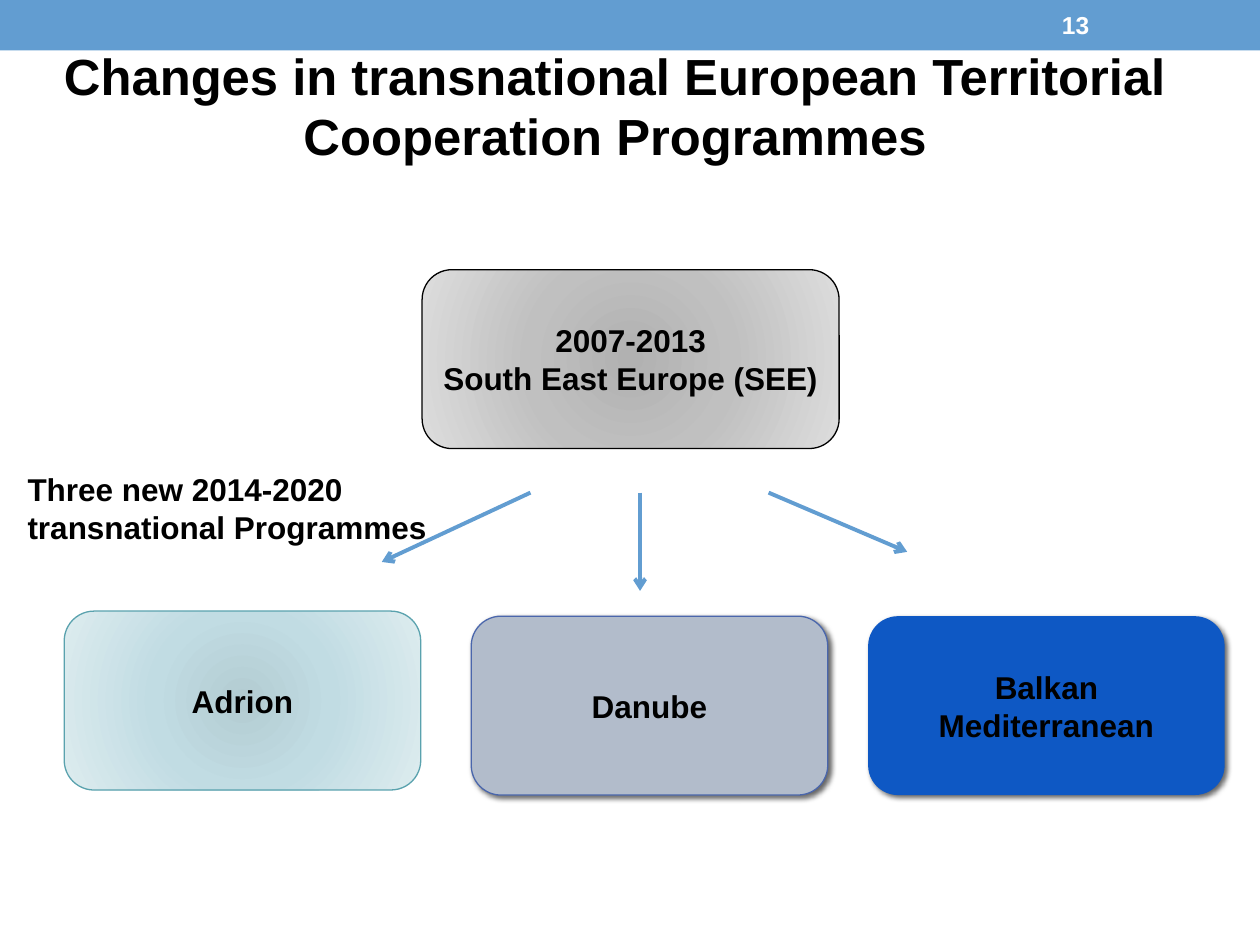
from dataclasses import dataclass
from typing import Optional

from pptx import Presentation
from pptx.dml.color import RGBColor
from pptx.enum.shapes import MSO_CONNECTOR, MSO_SHAPE
from pptx.enum.text import MSO_ANCHOR, PP_ALIGN
from pptx.oxml import parse_xml
from pptx.oxml.ns import nsdecls, qn
from pptx.oxml.xmlchemy import OxmlElement
from pptx.util import Inches, Pt

BLACK = RGBColor(0x00, 0x00, 0x00)
WHITE = RGBColor(0xFF, 0xFF, 0xFF)
ACCENT = RGBColor(0x62, 0x9D, 0xD1)
TEAL = RGBColor(0x5A, 0xA2, 0xAE)
INDIGO = RGBColor(0x4A, 0x66, 0xAC)
BLUE_GREY = RGBColor(0xB2, 0xBC, 0xCB)
BLUE = RGBColor(0x0E, 0x58, 0xC4)
GREYS = (RGBColor(0xB1, 0xB1, 0xB1), RGBColor(0xC0, 0xC0, 0xC0), RGBColor(0xDD, 0xDD, 0xDD))
TEALS = (RGBColor(0xB3, 0xCC, 0xD2), RGBColor(0xC1, 0xDC, 0xE3), RGBColor(0xDD, 0xEC, 0xEF))
GRADIENT_STOPS = (0, 45000, 100000)
BOX_HEIGHT = 1.42
PROGRAMME_WIDTH = 2.83
ARROW_TOP = 3.91


@dataclass(frozen=True)
class Box:
    text: str
    left: float
    top: float
    width: float
    colors: tuple[RGBColor, ...]
    outline: Optional[RGBColor] = None
    shadow: bool = False


@dataclass(frozen=True)
class Arrow:
    start_x: float
    end_x: float
    end_y: float


BOXES = (
    Box("2007-2013\nSouth East Europe (SEE)", 3.35, 2.14, 3.31, GREYS, BLACK),
    Box("Adrion", 0.51, 4.85, PROGRAMME_WIDTH, TEALS, TEAL),
    Box("Danube", 3.74, 4.89, PROGRAMME_WIDTH, (BLUE_GREY,), INDIGO, True),
    Box("Balkan Mediterranean", 6.89, 4.89, PROGRAMME_WIDTH, (BLUE,), None, True),
)
ARROWS = (Arrow(4.21, 3.03, 4.46), Arrow(6.1, 7.2, 4.38), Arrow(5.08, 5.08, 4.69))


def write_text(shape, text: str, *, size: float = 18, color: RGBColor = BLACK,
               align: PP_ALIGN = PP_ALIGN.LEFT, anchor: MSO_ANCHOR = MSO_ANCHOR.MIDDLE) -> None:
    frame = shape.text_frame
    frame.word_wrap = True
    frame.vertical_anchor = anchor
    frame.text = text
    for paragraph in frame.paragraphs:
        paragraph.alignment = align
        font = paragraph.runs[0].font
        font.name = "Arial"
        font.size = Pt(size)
        font.bold = True
        font.color.rgb = color


def add_text(slide, text: str, left: float, top: float, width: float, height: float, **text_format) -> None:
    shape = slide.shapes.add_textbox(Inches(left), Inches(top), Inches(width), Inches(height))
    write_text(shape, text, **text_format)


def apply_radial_gradient(shape, colors: tuple[RGBColor, ...]) -> None:
    stops = "".join(
        f'<a:gs pos="{position}"><a:srgbClr val="{str(color)}"/></a:gs>'
        for position, color in zip(GRADIENT_STOPS, colors)
    )
    gradient = parse_xml(
        f'<a:gradFill {nsdecls("a")} rotWithShape="1"><a:gsLst>{stops}</a:gsLst>'
        '<a:path path="circle"><a:fillToRect l="100000" t="100000" r="100000" b="100000"/>'
        "</a:path></a:gradFill>"
    )
    properties = shape.element.spPr
    properties.replace(properties.find(qn("a:solidFill")), gradient)


def apply_shadow(shape) -> None:
    shape.element.spPr.find(qn("a:effectLst")).append(parse_xml(
        f'<a:outerShdw {nsdecls("a")} blurRad="{int(Pt(3))}" dist="{int(Pt(2))}" dir="2700000" '
        f'rotWithShape="0"><a:srgbClr val="{str(BLACK)}"><a:alpha val="60000"/></a:srgbClr></a:outerShdw>'
    ))


def add_filled_shape(slide, kind: MSO_SHAPE, left: float, top: float, width: float, height: float,
                     color: RGBColor, outline: Optional[RGBColor] = None):
    shape = slide.shapes.add_shape(kind, Inches(left), Inches(top), Inches(width), Inches(height))
    shape.shadow.inherit = False
    shape.fill.solid()
    shape.fill.fore_color.rgb = color
    if outline is None:
        shape.line.fill.background()
    else:
        shape.line.color.rgb = outline
        shape.line.width = Pt(0.75)
    return shape


def add_box(slide, box: Box) -> None:
    shape = add_filled_shape(slide, MSO_SHAPE.ROUNDED_RECTANGLE, box.left, box.top,
                             box.width, BOX_HEIGHT, box.colors[0], box.outline)
    if len(box.colors) > 1:
        apply_radial_gradient(shape, box.colors)
    if box.shadow:
        apply_shadow(shape)
    shape.text_frame.margin_left = shape.text_frame.margin_right = Inches(0.08)
    write_text(shape, box.text, align=PP_ALIGN.CENTER)


def add_arrow(slide, arrow: Arrow) -> None:
    connector = slide.shapes.add_connector(
        MSO_CONNECTOR.STRAIGHT, Inches(arrow.start_x), Inches(ARROW_TOP),
        Inches(arrow.end_x), Inches(arrow.end_y))
    connector.line.color.rgb = ACCENT
    connector.line.width = Pt(2.25)
    head = OxmlElement("a:tailEnd")
    head.set("type", "arrow")
    properties = connector.element.spPr
    properties.find(qn("a:ln")).append(head)
    properties.append(OxmlElement("a:effectLst"))


def main() -> None:
    presentation = Presentation()
    presentation.slide_width = Inches(10)
    presentation.slide_height = Inches(7.5)
    slide = presentation.slides.add_slide(presentation.slide_layouts[6])

    add_filled_shape(slide, MSO_SHAPE.RECTANGLE, 0, 0, 10, 0.4, ACCENT)
    add_text(slide, "Changes in transnational European Territorial Cooperation Programmes",
             0.12, 0.21, 9.53, 1.25, size=29, align=PP_ALIGN.CENTER)
    for box in BOXES:
        add_box(slide, box)
    for arrow in ARROWS:
        add_arrow(slide, arrow)
    add_text(slide, "Three new 2014-2020 transnational Programmes",
             0.12, 3.68, 3.62, 0.71, anchor=MSO_ANCHOR.TOP)
    add_text(slide, "13", 8.33, 0.02, 1.17, 0.36, size=14, color=WHITE)
    presentation.save("out.pptx")


if __name__ == "__main__":
    main()
